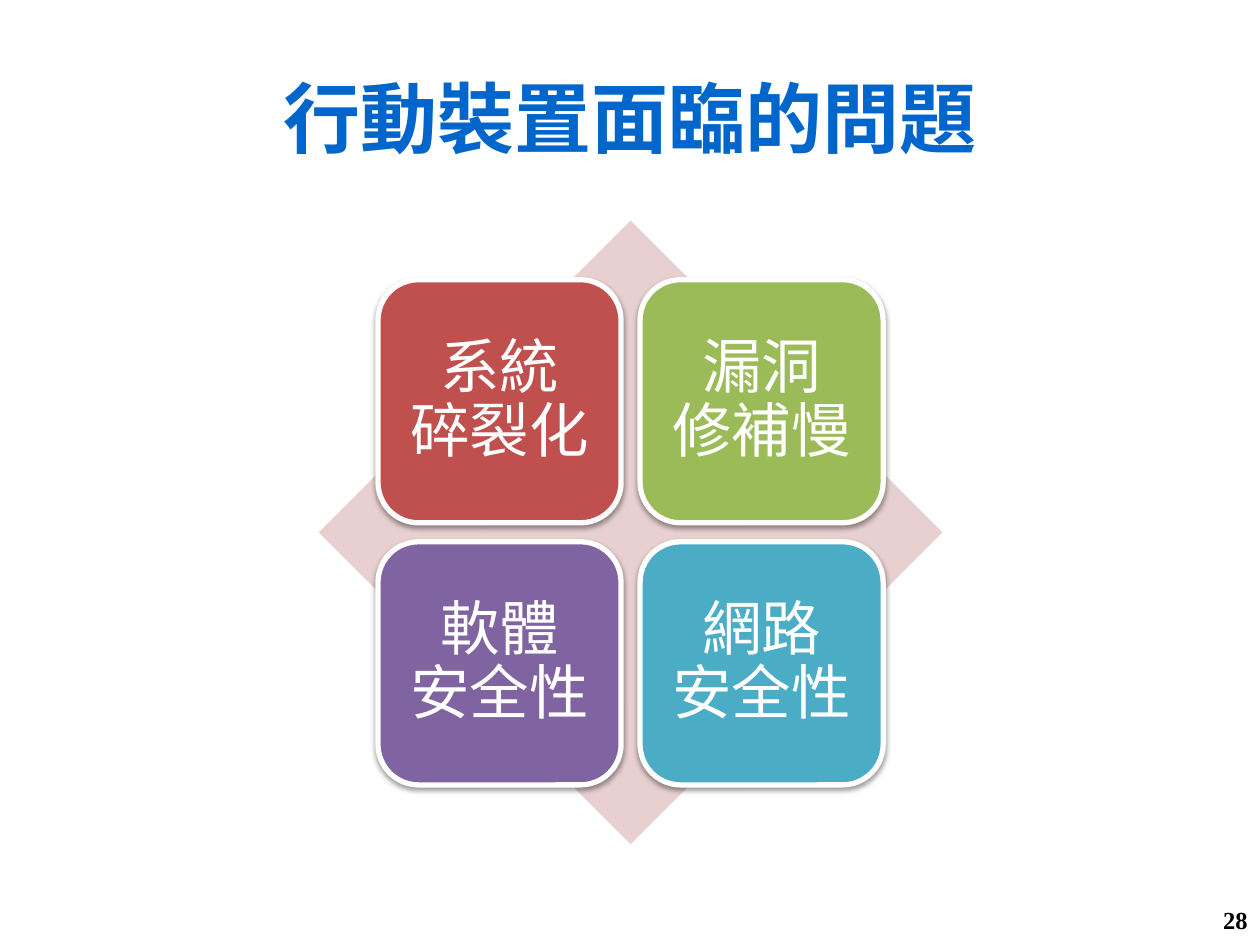
from lxml import etree
from pptx import Presentation, util as u
from pptx.dml.color import RGBColor
from pptx.enum import shapes, text
from pptx.oxml import ns

FONT = "Times New Roman"
COLORS = {
    "title": "0066CC", "diamond": "E8D0D0", "white": "FFFFFF", "black": "000000",
    "red": "C0504D", "green": "9BBB59", "purple": "8064A2", "blue": "4BACC6",
}
PROBLEMS = [
    ("系統 碎裂化", "red"), ("漏洞 修補慢", "green"),
    ("軟體 安全性", "purple"), ("網路 安全性", "blue"),
]
CARD_SIZE, CARD_PITCH = 1.93, 2.08
CARDS_LEFT, CARDS_TOP = 3, 2.22


def color(name):
    """Return the named colour."""
    return RGBColor.from_string(COLORS[name])


def write(shape, words, size, color_name, align, bold=False, inset=None):
    """Write one formatted paragraph, centred vertically."""
    frame = shape.text_frame
    frame.word_wrap = True
    frame.vertical_anchor = text.MSO_ANCHOR.MIDDLE
    if inset is not None:
        for side in ("left", "top", "right", "bottom"):
            setattr(frame, f"margin_{side}", u.Inches(inset))
    paragraph = frame.paragraphs[0]
    paragraph.text = words
    paragraph.alignment = align
    for name, value in {"name": FONT, "size": u.Pt(size), "bold": bold}.items():
        setattr(paragraph.font, name, value)
    paragraph.font.color.rgb = color(color_name)
    return paragraph


def place(shape, left, top, width, height):
    """Set the position and size of a shape in inches."""
    box = {"left": left, "top": top, "width": width, "height": height}
    for name, value in box.items():
        setattr(shape, name, u.Inches(value))


def add_filled(parent, kind, left, top, size, color_name):
    """Add a square preset shape with a plain fill and no line."""
    shape = parent.shapes.add_shape(kind, *map(u.Inches, (left, top, size, size)))
    shape.shadow.inherit = False
    shape.fill.solid()
    shape.fill.fore_color.rgb = color(color_name)
    shape.line.fill.background()
    return shape


def add_shadow(shape):
    """Give a shape a soft shadow straight below it."""
    effects = shape._element.spPr.find(ns.qn("a:effectLst"))
    shadow = etree.SubElement(
        effects, ns.qn("a:outerShdw"), blurRad=str(u.Pt(3.1)),
        dist=str(u.Pt(1.6)), dir="5400000", rotWithShape="0")
    tint = etree.SubElement(shadow, ns.qn("a:srgbClr"), val=COLORS["black"])
    etree.SubElement(tint, ns.qn("a:alpha"), val="38000")


def add_card(parent, index, words, color_name):
    """Add one problem card to the two-by-two grid."""
    row, column = divmod(index, 2)
    card = add_filled(
        parent, shapes.MSO_SHAPE.ROUNDED_RECTANGLE, CARDS_LEFT + column * CARD_PITCH,
        CARDS_TOP + row * CARD_PITCH, CARD_SIZE, color_name)
    card.line.color.rgb = color("white")
    card.line.width = u.Pt(3)
    add_shadow(card)
    paragraph = write(card, words, 34, "white", text.PP_ALIGN.CENTER, inset=0.14)
    paragraph.line_spacing = 0.9


def main():
    """Build and save the slide."""
    presentation = Presentation()
    presentation.slide_width, presentation.slide_height = u.Inches(10), u.Inches(7.5)
    slide = presentation.slides.add_slide(presentation.slide_layouts[5])

    title = slide.shapes.title
    place(title, 0.5, 0.3, 9, 1.25)
    write(title, "行動裝置面臨的問題", 44, "title", text.PP_ALIGN.CENTER, bold=True)

    matrix = slide.shapes.add_group_shape()
    add_filled(matrix, shapes.MSO_SHAPE.DIAMOND, 2.53, 1.75, 4.95, "diamond")
    for index, (words, color_name) in enumerate(PROBLEMS):
        add_card(matrix, index, words, color_name)

    number = slide.shapes.add_textbox(*map(u.Inches, (7.67, 7.1, 2.33, 0.4)))
    write(number, "28", 14, "black", text.PP_ALIGN.RIGHT, bold=True)
    presentation.save("out.pptx")


if __name__ == "__main__":
    main()
